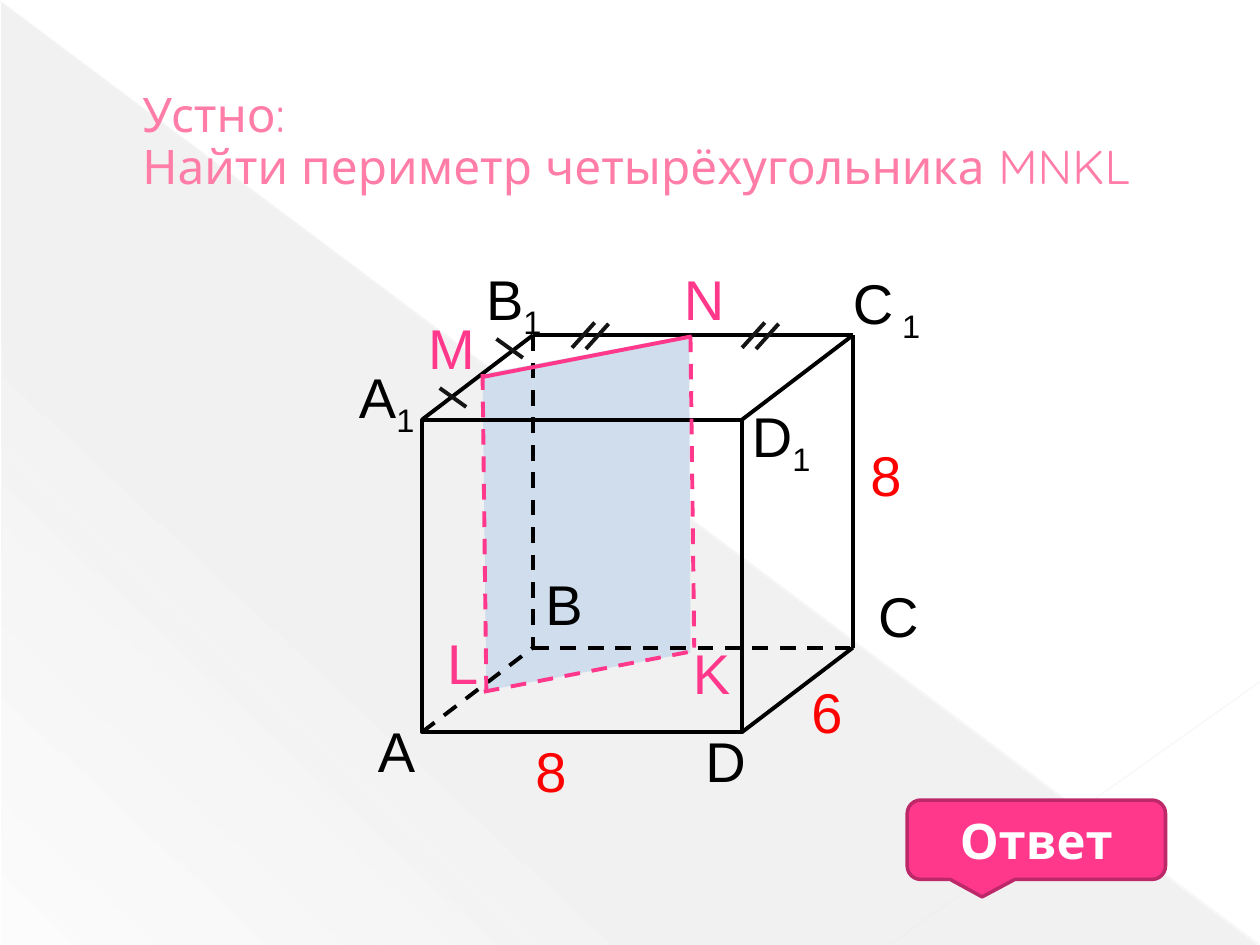
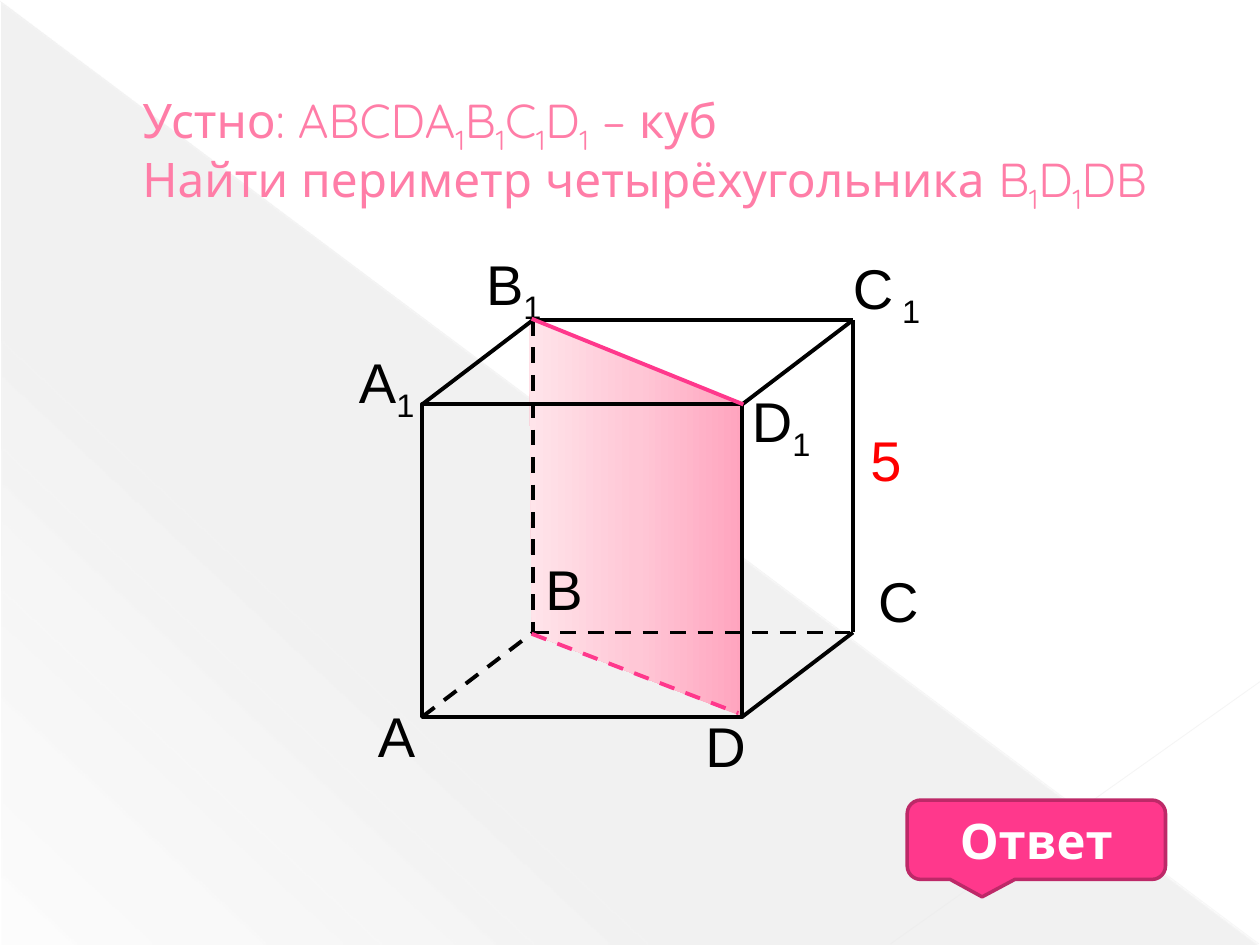
import pptx
import pptx.util
import pptx.dml.color
import pptx.enum.dml
import pptx.enum.shapes
import pptx.enum.text
import pptx.oxml.ns
import lxml.etree

Inches = pptx.util.Inches
color = pptx.dml.color.RGBColor.from_string
qn = pptx.oxml.ns.qn
SHAPES = pptx.enum.shapes.MSO_SHAPE

BLACK, RED, PINK = "000000", "FF0000", "FF388C"
TITLE_PINK, TICK, BLUE = "FF7DA7", "151515", "CFDDED"
TITLE_FONT, LABEL_FONT = "Quicksand", "Arial"

# Cube corners as they stand on the first slide
LEFT, RIGHT, TOP, BOTTOM = 3.35, 5.89, 3.33, 5.81
DEPTH_X, DEPTH_Y = 0.88, -0.67
corners = {
    "A": (LEFT, BOTTOM), "D": (RIGHT, BOTTOM), "A1": (LEFT, TOP), "D1": (RIGHT, TOP),
    "B": (LEFT + DEPTH_X, BOTTOM + DEPTH_Y), "C": (RIGHT + DEPTH_X, BOTTOM + DEPTH_Y),
    "B1": (LEFT + DEPTH_X, TOP + DEPTH_Y), "C1": (RIGHT + DEPTH_X, TOP + DEPTH_Y),
}
# Edges behind the front face: start, end, hidden
edges = [("A1", "B1", False), ("D1", "C1", False), ("D", "C", False), ("A", "B", True),
         ("B1", "B", True), ("C1", "C", False), ("B1", "C1", False), ("B", "C", True)]
# Underscores enclose a subscript
corner_labels = [("A", 2.9, 5.64), ("C", 6.87, 4.57), ("D", 5.5, 5.72), ("A_1_", 2.75, 2.83),
                 ("D_1_", 5.87, 3.14), ("В_1_", 3.76, 2.05), ("С_ 1_", 6.67, 2.08),
                 ("В", 4.23, 4.47)]

# What differs between the tasks
tasks = [
    {
        "title": ["Устно:", "Найти периметр четырёхугольника MNKL"],
        "rise": 0,
        "section": [(3.83, 2.97), (5.47, 2.66), (5.48, 5.18), (3.86, 5.48)],
        "section_lines": [((3.83, 2.97), (3.86, 5.48), True), ((5.48, 2.67), (5.51, 5.14), True),
                          ((3.84, 5.49), (5.49, 5.17), True), ((3.84, 2.99), (5.49, 2.67), False)],
        "labels": [("8", 6.81, 3.45, RED), ("6", 6.34, 5.33, RED), ("8", 4.15, 5.8, RED),
                   ("M", 3.3, 2.44, PINK), ("N", 5.33, 2.05, PINK),
                   ("K", 5.4, 5.02, PINK), ("L", 3.45, 4.94, PINK)],
        # Equal halves: single ticks on A1B1, double ticks on B1C1
        "ticks": [(3.94, 2.69, 0.21, 0.15), (3.49, 3.08, 0.21, 0.15)]
                 + [(x + gap, 2.56 + gap / 11, -0.18, 0.2)
                    for x in (4.72, 6.07) for gap in (0, 0.11)],
    },
    {
        "title": ["Устно: ABCDA_1_B_1_C_1_D_1_ – куб", "Найти периметр четырёхугольника B_1_D_1_DB"],
        "rise": 0.12,
        "section": [(4.2, 2.52), (5.9, 3.21), (5.9, 5.69), (4.22, 5.03)],
        "gradient": [(0, "FFA4BE", 100), (50, "FFC7D6", 100), (100, "FFE4EA", 100)],
        "section_lines": [((4.22, 5.03), (5.86, 5.66), True), ((4.22, 2.53), (5.9, 3.21), False)],
        "labels": [("5", 6.81, 3.45, RED)],
        "ticks": [],
    },
]
corner_gradient = [(0, "666666", 10), (70, "666666", 8), (100, "666666", 1)]


def draw_line(slide, start, end, hex_color, width=2.25, dashed=False, alpha=100):
    line = slide.shapes.add_connector(pptx.enum.shapes.MSO_CONNECTOR.STRAIGHT,
                                      *[Inches(v) for v in (*start, *end)])
    line.line.color.rgb = color(hex_color)
    line.line.width = pptx.util.Pt(width)
    if dashed:
        line.line.dash_style = pptx.enum.dml.MSO_LINE.DASH
    properties = line._element.spPr
    if alpha < 100:
        tint = properties.find(".//" + qn("a:srgbClr"))
        lxml.etree.SubElement(tint, qn("a:alpha")).set("val", str(alpha * 1000))
    lxml.etree.SubElement(properties, qn("a:effectLst"))


def write(paragraph, text, font, size, hex_color, bold=False):
    for index, part in enumerate(text.split("_")):
        if not part:
            continue
        run = paragraph.add_run()
        run.text = part
        run.font.name = font
        run.font.size = pptx.util.Pt(size)
        run.font.bold = bold
        run.font.color.rgb = color(hex_color)
        if index % 2:
            run.font._element.set("baseline", "-25000")


presentation = pptx.Presentation()
presentation.slide_width, presentation.slide_height = Inches(10), Inches(7.5)

for task in tasks:
    slide = presentation.slides.add_slide(presentation.slide_layouts[6])
    rise = task["rise"]

    # Background: grey corner and faint diagonals
    corner = slide.shapes.add_shape(SHAPES.RIGHT_TRIANGLE, Inches(0.01), Inches(0.02),
                                    Inches(9.98), Inches(7.48))
    draw_line(slide, (0, 0.01), (9.99, 7.49), "E8E8E8", 0.39, alpha=35)
    draw_line(slide, (10, 5.41), (7.07, 7.49), "EAEAEA", 0.47, alpha=45)

    # Section of the cube
    points = [(Inches(x), Inches(y)) for x, y in task["section"]]
    outline = slide.shapes.build_freeform(*points[0])
    outline.add_line_segments(points[1:], close=True)
    section = outline.convert_to_shape()

    gradients = [(corner, corner_gradient, 133)]
    if "gradient" in task:
        gradients.append((section, task["gradient"], 180))
    else:
        section.fill.solid()
        section.fill.fore_color.rgb = color(BLUE)
    for shape in (corner, section):
        shape.shadow.inherit = False
        shape.line.fill.background()
    for shape, stops, angle in gradients:
        shape.fill.gradient()
        shape.fill.gradient_angle = 360 - angle
        stop_list = shape._element.spPr.find(".//" + qn("a:gsLst"))
        for stop in list(stop_list):
            stop_list.remove(stop)
        for position, hex_color, alpha in stops:
            stop = lxml.etree.SubElement(stop_list, qn("a:gs"), pos=str(position * 1000))
            tint = lxml.etree.SubElement(stop, qn("a:srgbClr"), val=hex_color)
            lxml.etree.SubElement(tint, qn("a:alpha"), val=str(alpha * 1000))

    # Cube
    front = slide.shapes.add_shape(SHAPES.RECTANGLE, Inches(LEFT), Inches(TOP - rise),
                                   Inches(RIGHT - LEFT), Inches(BOTTOM - TOP))
    front.shadow.inherit = False
    front.fill.background()
    front.line.color.rgb = color(BLACK)
    front.line.width = pptx.util.Pt(2.25)
    for start, end, hidden in edges:
        (x1, y1), (x2, y2) = corners[start], corners[end]
        draw_line(slide, (x1, y1 - rise), (x2, y2 - rise), BLACK, dashed=hidden)

    # Letters and lengths
    for text, x, y, hex_color in [(*label, BLACK) for label in corner_labels] + task["labels"]:
        label = slide.shapes.add_textbox(Inches(x), Inches(y - rise),
                                         Inches(1.07 if "_" in text else 0.55), Inches(0.64))
        label.text_frame.word_wrap = True
        write(label.text_frame.paragraphs[0], text, LABEL_FONT, 32, hex_color)

    # Section sides
    for start, end, hidden in task["section_lines"]:
        draw_line(slide, start, end, PINK, dashed=hidden)

    # Title
    title = slide.shapes.add_textbox(Inches(0.5), Inches(0.68), Inches(9), Inches(1.14)).text_frame
    title.word_wrap = True
    title.margin_left = Inches(0.63)
    title.add_paragraph()
    for paragraph, text in zip(title.paragraphs, task["title"]):
        paragraph.line_spacing = 0.9
        write(paragraph, text, TITLE_FONT, 27.2, TITLE_PINK)

    # Equal-length ticks
    for x, y, run_x, run_y in task["ticks"]:
        draw_line(slide, (x, y), (x + run_x, y + run_y), TICK)

    # Answer button
    answer = slide.shapes.add_shape(SHAPES.ROUNDED_RECTANGULAR_CALLOUT, Inches(7.2), Inches(6.35),
                                    Inches(2.05), Inches(0.63))
    for index, value in enumerate((-0.21, 0.72, 0.17)):
        answer.adjustments[index] = value
    answer.shadow.inherit = False
    answer.fill.solid()
    answer.fill.fore_color.rgb = color(PINK)
    answer.line.color.rgb = color("BD2968")
    answer.line.width = pptx.util.Pt(2)
    answer.text_frame.vertical_anchor = pptx.enum.text.MSO_ANCHOR.MIDDLE
    caption = answer.text_frame.paragraphs[0]
    caption.alignment = pptx.enum.text.PP_ALIGN.CENTER
    write(caption, "Ответ", TITLE_FONT, 28, "FFFFFF", bold=True)

presentation.save("out.pptx")
